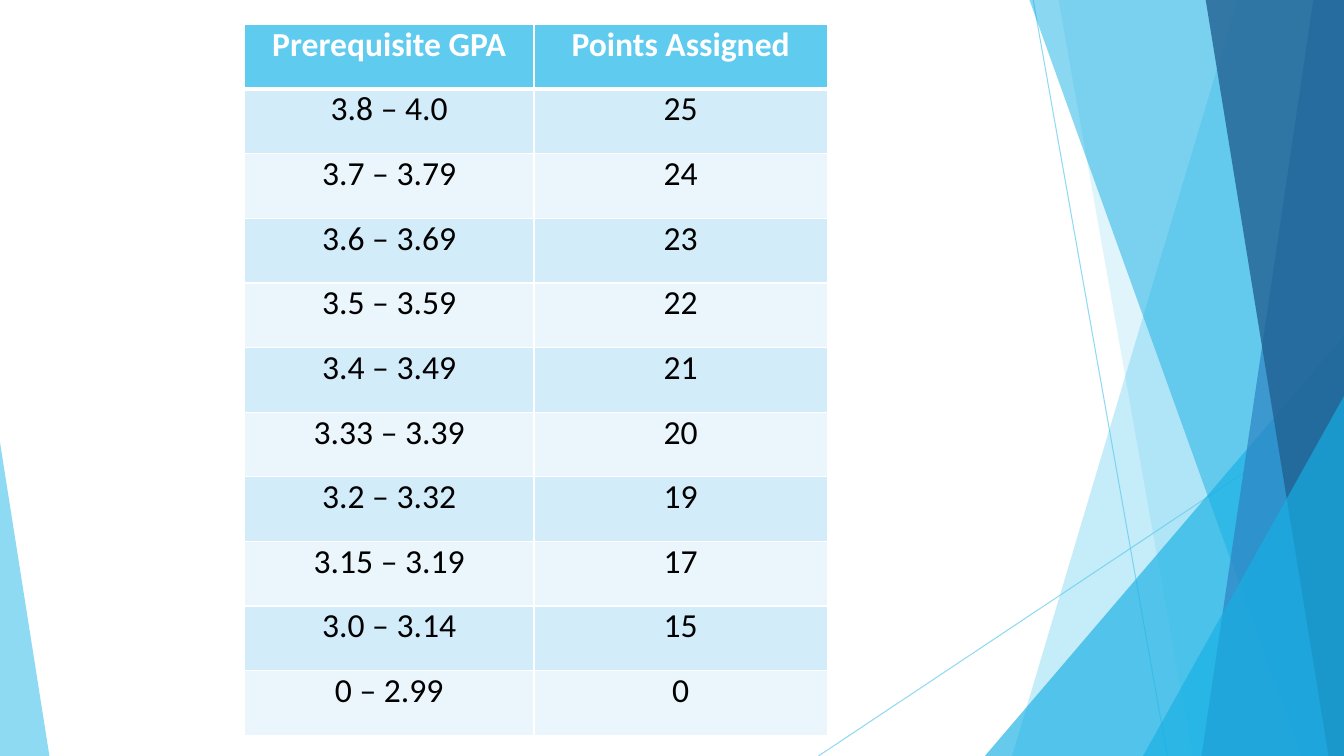
import lxml.etree
import pptx
import pptx.dml.color
import pptx.enum.shapes
import pptx.enum.text
import pptx.oxml.ns
import pptx.util

Pt = pptx.util.Pt
RGBColor = pptx.dml.color.RGBColor
qn = pptx.oxml.ns.qn

WHITE = RGBColor(0xFF, 0xFF, 0xFF)
BLACK = RGBColor(0, 0, 0)
SKY = RGBColor(0x5F, 0xCB, 0xEF)
CYAN = RGBColor(0x17, 0xB0, 0xE4)
BLUE = RGBColor(0x2E, 0x83, 0xC3)
NAVY = RGBColor(0x22, 0x62, 0x92)
ROW_FILLS = (RGBColor(0xEA, 0xF6, 0xFC), RGBColor(0xD2, 0xEC, 0xF9))

SLIDE_WIDTH, SLIDE_HEIGHT = 960, 540
BAND_TOP = -0.72
TABLE_LEFT, TABLE_TOP = 174.5, 17.5
COLUMN_WIDTHS = (207, 209.5)
ROW_HEIGHT = 46.15

RAYS = [(738, 0, 833.8, 540), (960, 290.2, 584.6, 540)]
# top left x, bottom left x, colour, opacity in percent
BACK_BANDS = [(884.2, 722.9, SKY, 36), (756, 851.8, SKY, 20)]
FRONT_BANDS = [
    (735.1, 929.5, CYAN, 50),
    (938.2, 858.2, BLUE, 70),
    (861.1, 949, NAVY, 80),
]

GPA_POINTS = [
    ("Prerequisite GPA", "Points Assigned"),
    ("3.8 – 4.0", "25"),
    ("3.7 – 3.79", "24"),
    ("3.6 – 3.69", "23"),
    ("3.5 – 3.59", "22"),
    ("3.4 – 3.49", "21"),
    ("3.33 – 3.39", "20"),
    ("3.2 – 3.32", "19"),
    ("3.15 – 3.19", "17"),
    ("3.0 – 3.14", "15"),
    ("0 – 2.99", "0"),
]
CELL_FORMAT = {
    "margin_left": Pt(5),
    "margin_right": Pt(5),
    "margin_top": Pt(0),
    "margin_bottom": Pt(0),
    "vertical_anchor": pptx.enum.text.MSO_ANCHOR.TOP,
}
FONT_FORMAT = {"name": "Calibri", "size": Pt(24)}


def set_format(target, values):
    for attribute, value in values.items():
        setattr(target, attribute, value)


def set_opacity(properties, percent):
    for color in properties.iter(qn("a:srgbClr")):
        lxml.etree.SubElement(color, qn("a:alpha"), val=str(percent * 1000))


def fill_facet(facet, color, opacity):
    facet.shadow.inherit = False
    facet.fill.solid()
    facet.fill.fore_color.rgb = color
    set_opacity(facet._element.spPr, opacity)
    facet.line.fill.background()


def add_ray(slide, *ends):
    ray = slide.shapes.add_connector(
        pptx.enum.shapes.MSO_CONNECTOR.STRAIGHT, *map(Pt, ends))
    ray.line.color.rgb = SKY
    ray.line.width = Pt(0.75)
    properties = ray._element.spPr
    set_opacity(properties, 70)
    lxml.etree.SubElement(properties, qn("a:effectLst"))


def add_band(slide, top_x, bottom_x, color, opacity):
    """Fill from a slanted left edge to the right edge of the slide."""
    outline = slide.shapes.build_freeform(Pt(top_x), Pt(BAND_TOP))
    corners = [(SLIDE_WIDTH, BAND_TOP), (SLIDE_WIDTH, SLIDE_HEIGHT),
               (bottom_x, SLIDE_HEIGHT)]
    outline.add_line_segments([(Pt(x), Pt(y)) for x, y in corners], close=True)
    fill_facet(outline.convert_to_shape(), color, opacity)


def add_corner(slide, left, top, width, apex, color, opacity):
    """Add a triangle that stands on the bottom edge of the slide."""
    corner = slide.shapes.add_shape(
        pptx.enum.shapes.MSO_SHAPE.ISOSCELES_TRIANGLE,
        Pt(left), Pt(top), Pt(width), Pt(SLIDE_HEIGHT - top))
    corner.adjustments[0] = apex
    fill_facet(corner, color, opacity)


def set_borders(cell, widths):
    properties = cell._tc.get_or_add_tcPr()
    for position, (side, width) in enumerate(widths.items()):
        border = lxml.etree.Element(qn("a:ln" + side), w=str(Pt(width)))
        fill = lxml.etree.SubElement(border, qn("a:solidFill"))
        lxml.etree.SubElement(fill, qn("a:srgbClr"), val=str(WHITE))
        properties.insert(position, border)


def fill_cell(cell, text, row):
    is_header = row == 0
    set_format(cell, CELL_FORMAT)
    cell.fill.solid()
    cell.fill.fore_color.rgb = SKY if is_header else ROW_FILLS[row % 2]
    set_borders(cell, {"L": 1, "R": 1, "T": 3 if row == 1 else 1,
                       "B": 3 if is_header else 1})
    paragraph = cell.text_frame.paragraphs[0]
    paragraph.alignment = pptx.enum.text.PP_ALIGN.CENTER
    run = paragraph.add_run()
    run.text = text
    set_format(run.font, FONT_FORMAT)
    run.font.bold = is_header
    run.font.color.rgb = WHITE if is_header else BLACK


def add_points_table(slide):
    table = slide.shapes.add_table(
        len(GPA_POINTS), len(COLUMN_WIDTHS), Pt(TABLE_LEFT), Pt(TABLE_TOP),
        Pt(sum(COLUMN_WIDTHS)), Pt(ROW_HEIGHT * len(GPA_POINTS))).table
    for column, width in zip(table.columns, COLUMN_WIDTHS):
        column.width = Pt(width)
    for row, texts in enumerate(GPA_POINTS):
        table.rows[row].height = Pt(ROW_HEIGHT)
        for column, text in enumerate(texts):
            fill_cell(table.cell(row, column), text, row)


def main():
    presentation = pptx.Presentation()
    presentation.slide_width = Pt(SLIDE_WIDTH)
    presentation.slide_height = Pt(SLIDE_HEIGHT)
    slide = presentation.slides.add_slide(presentation.slide_layouts[6])

    for ray in RAYS:
        add_ray(slide, *ray)
    for band in BACK_BANDS:
        add_band(slide, *band)
    add_corner(slide, 703.5, 239.8, 256.5, 1, CYAN, 66)
    for band in FRONT_BANDS:
        add_band(slide, *band)
    add_corner(slide, 816.5, 283, 143.5, 1, CYAN, 66)
    add_corner(slide, 0, 316, 35.3, 0, SKY, 70)
    add_points_table(slide)

    presentation.save("out.pptx")


if __name__ == "__main__":
    main()
